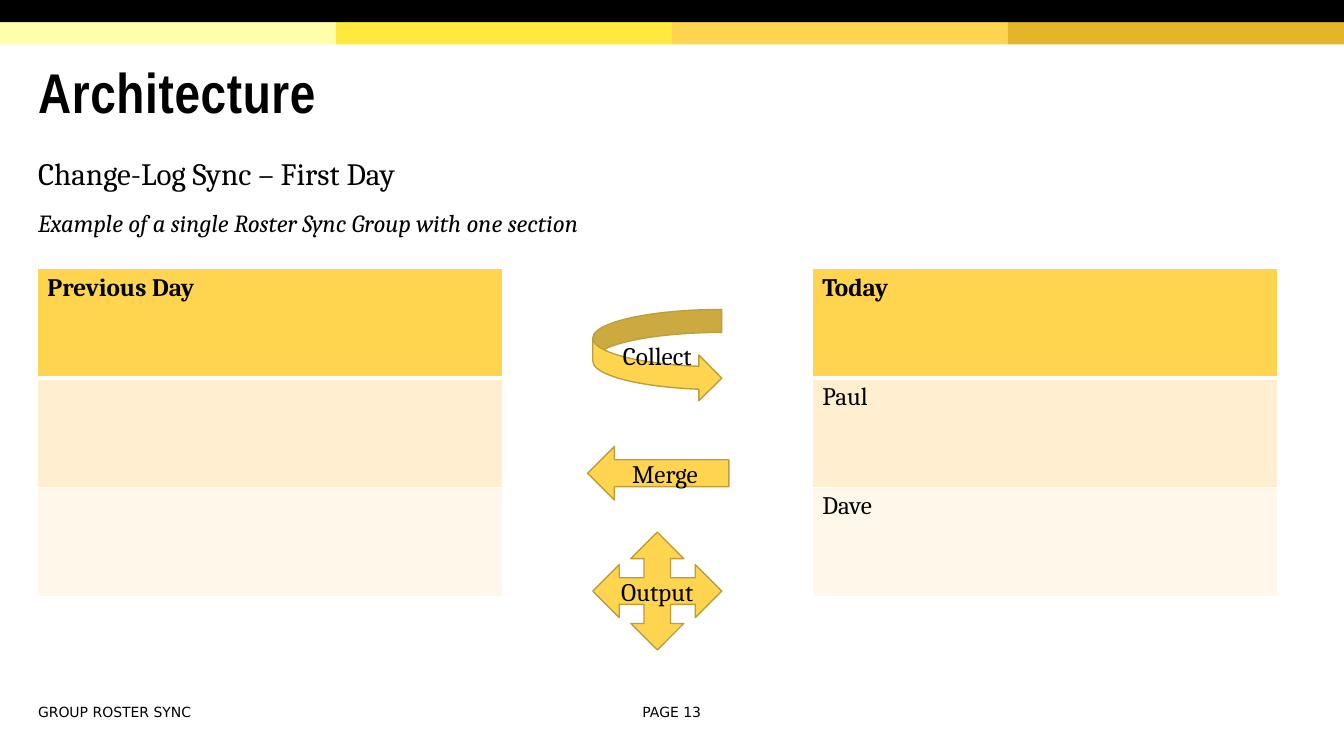
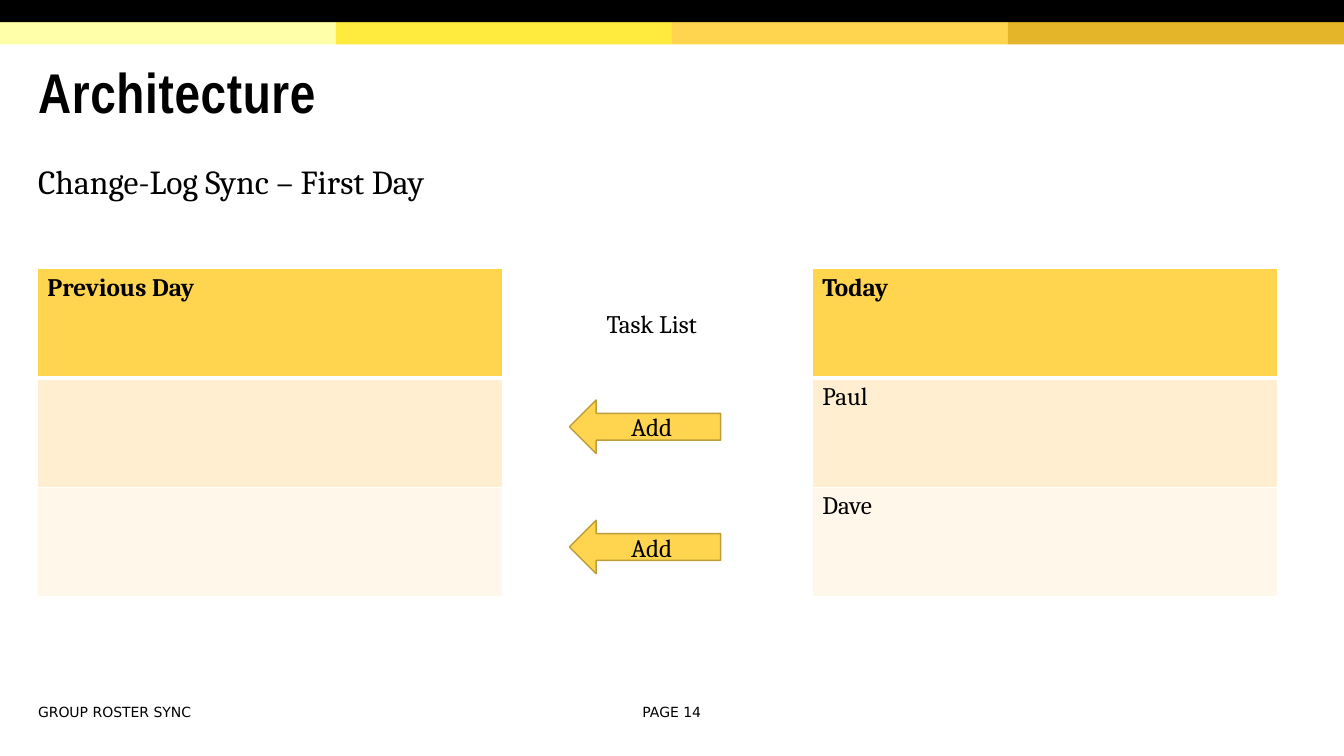
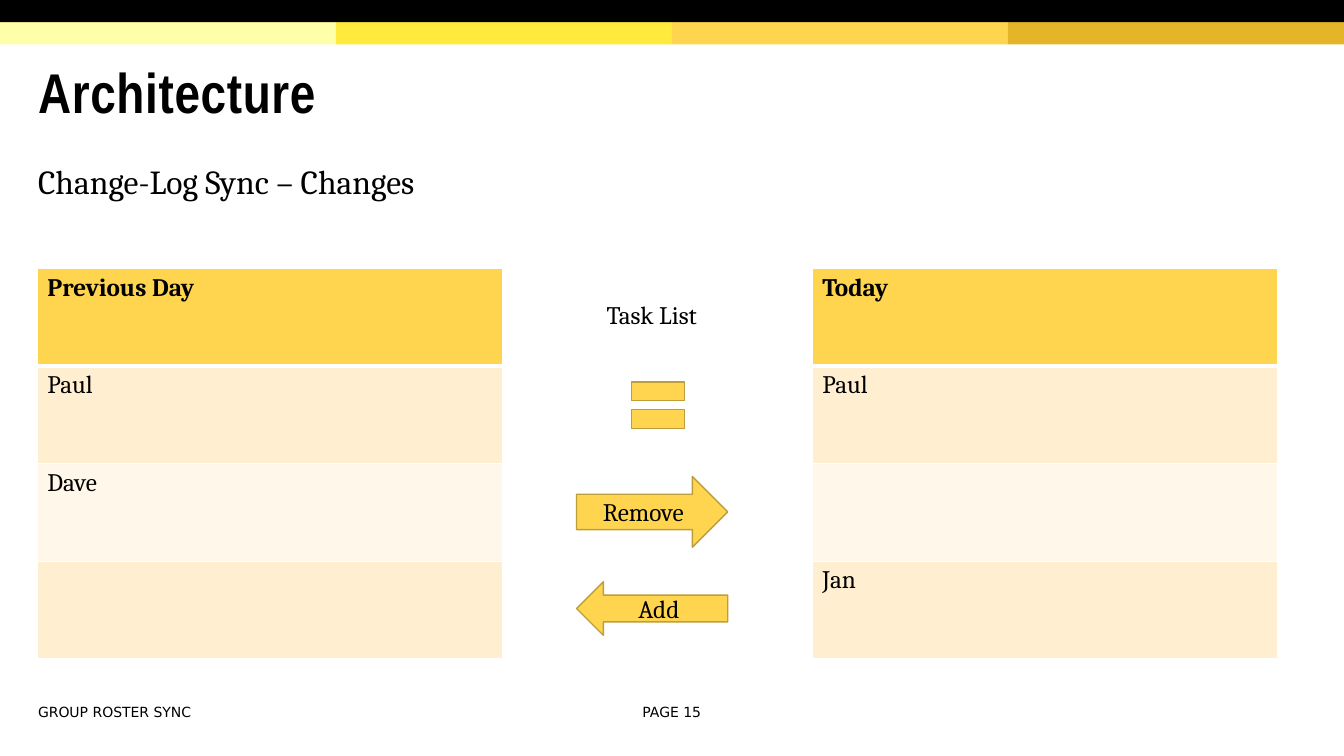
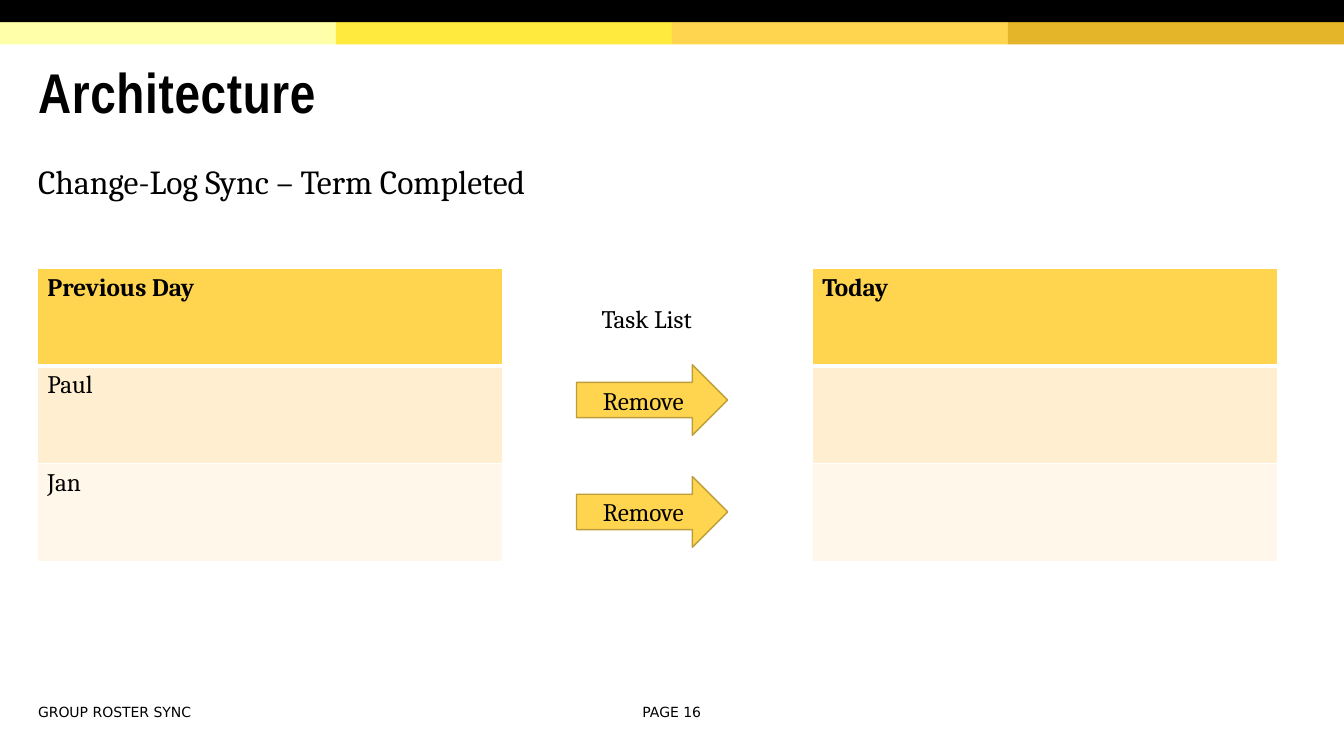
from lxml import etree
from pptx import Presentation
from pptx.dml.color import RGBColor
from pptx.enum.shapes import MSO_SHAPE
from pptx.enum.text import MSO_ANCHOR, PP_ALIGN
from pptx.oxml.ns import qn
from pptx.util import Cm, Pt

RECT = MSO_SHAPE.RECTANGLE
LEFT = MSO_SHAPE.LEFT_ARROW
RIGHT = MSO_SHAPE.RIGHT_ARROW
CURVED = MSO_SHAPE.CURVED_RIGHT_ARROW
QUAD = MSO_SHAPE.QUAD_ARROW
EQUAL = MSO_SHAPE.MATH_EQUAL
MIDDLE = MSO_ANCHOR.MIDDLE
TOP = MSO_ANCHOR.TOP
CENTER = PP_ALIGN.CENTER

# Colours and text styles
rgb = RGBColor.from_string
BLACK, WHITE, GOLD, EDGE = "000000", "FFFFFF", "FFD54F", "BD9E3A"
BANDS = ["FFFFAA", "FFEA3D", GOLD, "E4B429"]
STRIPES = ["FFF7E9", "FFEFD0"]

BODY = {"name": "Cambria", "size": Pt(18)}
HEAD = {**BODY, "bold": True}
LEAD = {**BODY, "size": Pt(24)}
LEAD_SMALL = {**BODY, "size": Pt(22.2)}
NOTE = {**BODY, "size": Pt(17.6), "italic": True}
TITLE = {"name": "Arial Narrow", "size": Pt(40), "bold": True}
FOOT = {"name": "DejaVu Sans", "size": Pt(10)}

# Page grid, in cm
WIDE, HIGH = 33.87, 19.05
EDGE_X, BAND = 0.71, 0.56
TABLE_Y, TABLE_W = 6.76, 11.73
SIDES = [(0.94, "Previous Day"), (20.47, "Today")]

# Each page: subtitle lines, row height, names per side, label spot, marks
PAGES = [
    {"lines": [("Change-Log Sync – First Day", LEAD_SMALL),
               ("Example of a single Roster Sync Group with one section", NOTE)],
     "row": 2.76, "names": [["", ""], ["Paul", "Dave"]], "label": None,
     "marks": [(LEFT, "Merge", 14.81, 11.25, 3.56, 1.35),
               (CURVED, "Collect", 14.94, 7.8, 3.25, 2.31),
               (QUAD, "Output", 14.94, 13.41, 3.25, 2.97)]},
    {"lines": [("Change-Log Sync – First Day", LEAD)],
     "row": 2.76, "names": [["", ""], ["Paul", "Dave"]], "label": (15.04, 7.65),
     "marks": [(LEFT, "Add", 14.35, 10.08, 3.81, 1.35),
               (LEFT, "Add", 14.35, 13.11, 3.81, 1.35)]},
    {"lines": [("Change-Log Sync – Changes", LEAD)],
     "row": 2.46, "names": [["Paul", "Dave", ""], ["Paul", "", "Jan"]],
     "label": (15.04, 7.42),
     "marks": [(RIGHT, "Remove", 14.53, 12.01, 3.81, 1.78),
               (LEFT, "Add", 14.53, 14.66, 3.81, 1.35),
               (EQUAL, "", 15.67, 9.22, 1.83, 1.98)]},
    {"lines": [("Change-Log Sync – Term Completed", LEAD)],
     "row": 2.46, "names": [["Paul", "Jan"], ["", ""]], "label": (14.91, 7.52),
     "marks": [(RIGHT, "Remove", 14.53, 12.01, 3.81, 1.78),
               (RIGHT, "Remove", 14.53, 9.19, 3.81, 1.78)]},
]


def write(frame, lines, anchor=TOP, **form):
    """Fill a text frame with (text, font style) lines."""
    frame.word_wrap = True
    frame.vertical_anchor = anchor
    for i, (text, style) in enumerate(lines):
        para = frame.add_paragraph() if i else frame.paragraphs[0]
        for key, value in form.items():
            setattr(para, key, value)
        if i:
            para.space_before = Pt(8)
        run = para.add_run()
        run.text = text
        for key, value in style.items():
            setattr(run.font, key, value)
        run.font.color.rgb = rgb(BLACK)


def draw(slide, kind, x, y, w, h, fill, line=None):
    """Add a flat preset shape."""
    shape = slide.shapes.add_shape(kind, Cm(x), Cm(y), Cm(w), Cm(h))
    shape.shadow.inherit = False
    shape.fill.solid()
    shape.fill.fore_color.rgb = rgb(fill)
    if line:
        shape.line.color.rgb = rgb(line)
        shape.line.width = Pt(1)
    else:
        shape.line.fill.background()
    return shape


deck = Presentation()
deck.slide_width, deck.slide_height = Cm(WIDE), Cm(HIGH)

for num, page in enumerate(PAGES, 13):
    slide = deck.slides.add_slide(deck.slide_layouts[6])

    # Top bands
    step = WIDE / len(BANDS)
    for i, tint in enumerate(BANDS):
        draw(slide, RECT, i * step, BAND, step, BAND, tint)
    draw(slide, RECT, 0, 0, WIDE, BAND, BLACK)

    # Title, subtitle, footer and label
    small = {"anchor": MIDDLE, "space_after": Pt(6)}
    lead = {"space_after": Pt(8)}
    if len(page["lines"]) > 1:
        lead["line_spacing"] = 0.8
    texts = [
        (EDGE_X, 1.19, 32.13, 2.49, [("Architecture", TITLE)],
         {"anchor": MIDDLE, "line_spacing": 0.85}),
        (EDGE_X, 3.94, 32.13, 2.31, page["lines"], lead),
        (EDGE_X, 17.6, 14.53, 0.69, [("GROUP ROSTER SYNC", FOOT)], small),
        (15.52, 17.6, 2.82, 0.69, [(f"PAGE {num}", FOOT)],
         {**small, "alignment": CENTER}),
    ]
    if page["label"]:
        texts.append((*page["label"], 3.07, 1.02, [("Task List", BODY)], {}))
    for x, y, w, h, lines, form in texts:
        box = slide.shapes.add_textbox(Cm(x), Cm(y), Cm(w), Cm(h))
        write(box.text_frame, lines, **form)
        if lines[0][1] is TITLE:
            run = box.text_frame.paragraphs[0].runs[0]
            run.font._element.set("spc", "50")

    # Tables
    for (x, head), names in zip(SIDES, page["names"]):
        cells = [head, *names]
        table = slide.shapes.add_table(
            len(cells), 1, Cm(x), Cm(TABLE_Y), Cm(TABLE_W),
            Cm(page["row"] * len(cells))).table
        table.first_row = table.horz_banding = False
        for i, text in enumerate(cells):
            table.rows[i].height = Cm(page["row"])
            cell = table.cell(i, 0)
            props = cell._tc.get_or_add_tcPr()
            for side in ("lnL", "lnR", "lnT", "lnB"):
                thick = (i, side) in ((0, "lnB"), (1, "lnT"))
                edge = etree.SubElement(props, qn(f"a:{side}"),
                                        w=str(Pt(3 if thick else 1)))
                solid = etree.SubElement(edge, qn("a:solidFill"))
                etree.SubElement(solid, qn("a:srgbClr"), val=WHITE)
            cell.fill.solid()
            cell.fill.fore_color.rgb = rgb(STRIPES[i % 2] if i else GOLD)
            if text:
                write(cell.text_frame, [(text, BODY if i else HEAD)])

    # Arrows and signs
    for kind, text, x, y, w, h in page["marks"]:
        mark = draw(slide, kind, x, y, w, h, GOLD, EDGE)
        if text:
            write(mark.text_frame, [(text, BODY)], MIDDLE, alignment=CENTER)

deck.save("out.pptx")
